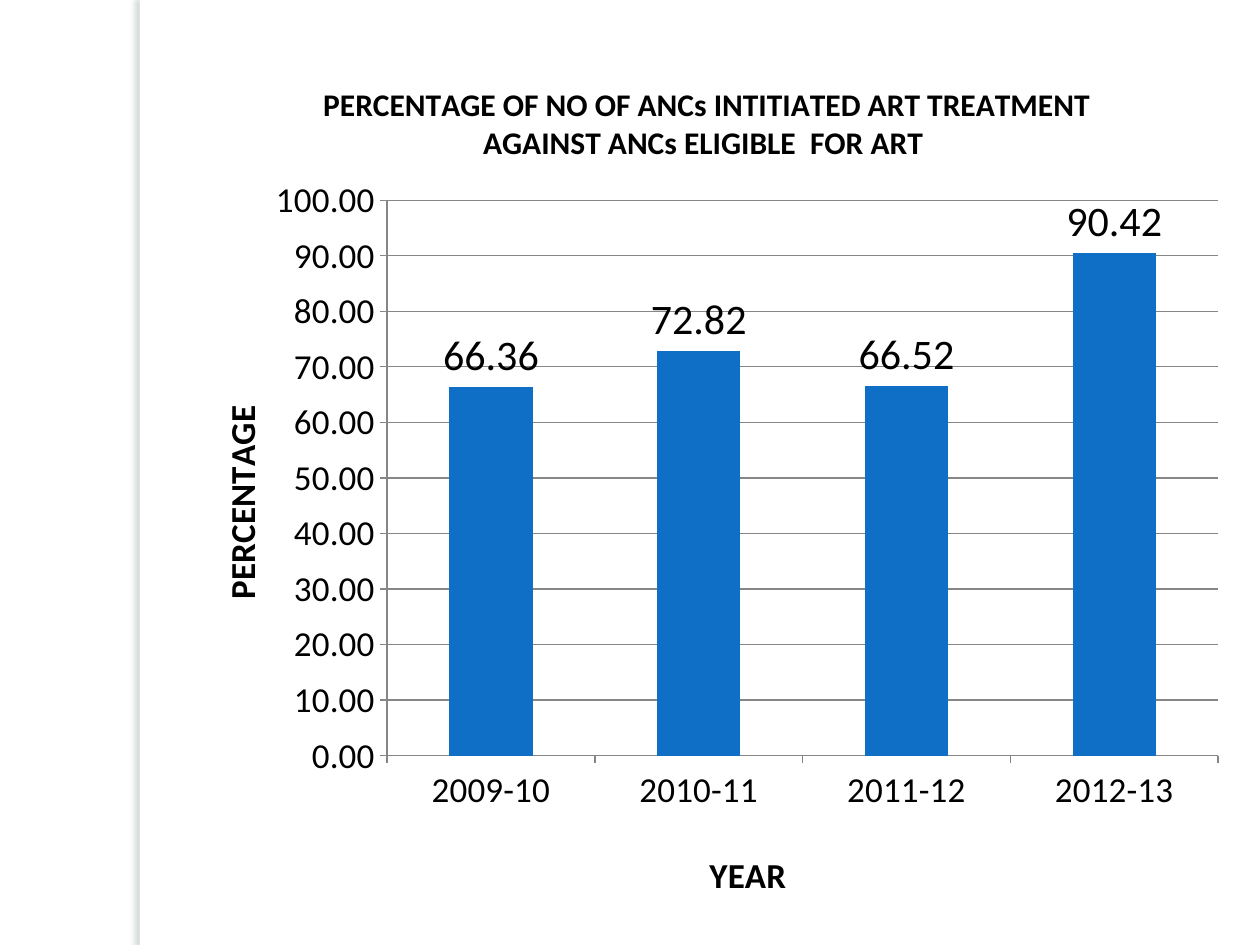
from lxml import etree
from pptx import Presentation
from pptx.chart.data import CategoryChartData
from pptx.dml.color import RGBColor
from pptx.enum.chart import XL_CHART_TYPE, XL_LABEL_POSITION, XL_TICK_MARK
from pptx.enum.shapes import MSO_SHAPE
from pptx.oxml import parse_xml
from pptx.oxml.ns import nsdecls, qn
from pptx.util import Inches, Pt

COLUMN = XL_CHART_TYPE.COLUMN_CLUSTERED
OUTSIDE_END = XL_LABEL_POSITION.OUTSIDE_END
TICK_OUT = XL_TICK_MARK.OUTSIDE
RECTANGLE = MSO_SHAPE.RECTANGLE

TITLE = "PERCENTAGE OF NO OF ANCs INTITIATED ART TREATMENT AGAINST ANCs ELIGIBLE  FOR ART "
CATEGORY_TITLE = "YEAR"
VALUE_TITLE = "PERCENTAGE"
SERIES = "Series 1"
PERCENTAGES = {"2009-10": 66.36, "2010-11": 72.82, "2011-12": 66.52, "2012-13": 90.42}

COLORS = {"paper": "FFFFFF", "text": "000000", "bar": "0F6FC6",
          "grid": "868686", "shadow": "6C7A7C"}
FONT = "Calibri"
NUMBER_FORMAT = "0.00"
WIDTH, HEIGHT = 10, 7.5

# Places inside the chart, as shares of its size
TITLE_AT = {"x": 0.14, "y": 0.04}
CATEGORY_TITLE_AT = {"x": 0.5, "y": 0.92}
VALUE_TITLE_AT = {"x": 0.04, "y": 0.41}
PLOT_AT = {"x": 0.205, "y": 0.182, "w": 0.776, "h": 0.637}


def color(name):
    return RGBColor.from_string(COLORS[name])


def style_font(font, size, bold=False):
    font.name = FONT
    font.size = Pt(size)
    font.bold = bold
    font.color.rgb = color("text")


def style_line(line):
    line.color.rgb = color("grid")
    line.width = Pt(0.75)


def place(element, shares, after=None):
    """Give a chart part a manual layout, put after the named child if there is one."""
    for old in element.findall(qn("c:layout")):
        element.remove(old)
    layout = etree.Element(qn("c:layout"))
    manual = etree.SubElement(layout, qn("c:manualLayout"))
    if "w" in shares:
        etree.SubElement(manual, qn("c:layoutTarget")).set("val", "inner")
    for side in "xy":
        etree.SubElement(manual, qn(f"c:{side}Mode")).set("val", "edge")
    for side, share in shares.items():
        etree.SubElement(manual, qn(f"c:{side}")).set("val", str(share))
    if after is None:
        element.insert(0, layout)
    else:
        element.find(qn(after)).addnext(layout)


def write_title(title, text, size, shares):
    run = title.text_frame.paragraphs[0].add_run()
    run.text = text
    style_font(run.font, size, bold=True)
    place(title._element, shares, after="c:tx")


def add_side_edge(slide):
    edge = slide.shapes.add_shape(RECTANGLE, Inches(1.11), 0, Inches(0.08), Inches(HEIGHT))
    edge.fill.solid()
    edge.fill.fore_color.rgb = color("paper")
    edge.line.fill.background()
    edge._element.spPr.append(parse_xml(
        f'<a:effectLst {nsdecls("a")}>'
        f'<a:outerShdw blurRad="{Pt(3)}" dist="{Pt(3)}" dir="10800000" rotWithShape="0">'
        f'<a:srgbClr val="{COLORS["shadow"]}"><a:alpha val="25000"/></a:srgbClr>'
        '</a:outerShdw></a:effectLst>'))


def add_percentage_chart(slide):
    data = CategoryChartData(number_format=NUMBER_FORMAT)
    data.categories = list(PERCENTAGES)
    data.add_series(SERIES, list(PERCENTAGES.values()))
    chart = slide.shapes.add_chart(
        COLUMN, Inches(1.33), Inches(0.33), Inches(8.5), Inches(6.92), data).chart
    style_font(chart.font, 10)
    chart.has_legend = False
    write_title(chart.chart_title, TITLE, 18, TITLE_AT)
    chart.chart_title.include_in_layout = False

    axes = ((chart.category_axis, CATEGORY_TITLE, CATEGORY_TITLE_AT),
            (chart.value_axis, VALUE_TITLE, VALUE_TITLE_AT))
    for axis, text, shares in axes:
        write_title(axis.axis_title, text, 20, shares)
        style_font(axis.tick_labels.font, 20)
        axis.major_tick_mark = TICK_OUT
        style_line(axis.format.line)
    body = chart.value_axis.axis_title.text_frame._txBody.bodyPr
    body.set("rot", "-5400000")
    body.set("vert", "horz")

    values = chart.value_axis
    values.minimum_scale, values.maximum_scale, values.major_unit = 0, 100, 10
    values.has_major_gridlines = True
    style_line(values.major_gridlines.format.line)
    values.tick_labels.number_format = NUMBER_FORMAT
    values.tick_labels.number_format_is_linked = False

    plot = chart.plots[0]
    plot.gap_width = 150
    plot.vary_by_categories = False
    series = plot.series[0]
    series.format.fill.solid()
    series.format.fill.fore_color.rgb = color("bar")
    labels = series.data_labels
    labels.show_value = True
    labels.position = OUTSIDE_END
    labels.number_format = NUMBER_FORMAT
    labels.number_format_is_linked = False
    style_font(labels.font, 24)
    place(chart._chartSpace.chart.plotArea, PLOT_AT)


def main():
    presentation = Presentation()
    presentation.slide_width = Inches(WIDTH)
    presentation.slide_height = Inches(HEIGHT)
    slide = presentation.slides.add_slide(presentation.slide_layouts[6])
    slide.background.fill.solid()
    slide.background.fill.fore_color.rgb = color("paper")
    add_side_edge(slide)
    add_percentage_chart(slide)
    presentation.save("out.pptx")


if __name__ == "__main__":
    main()
